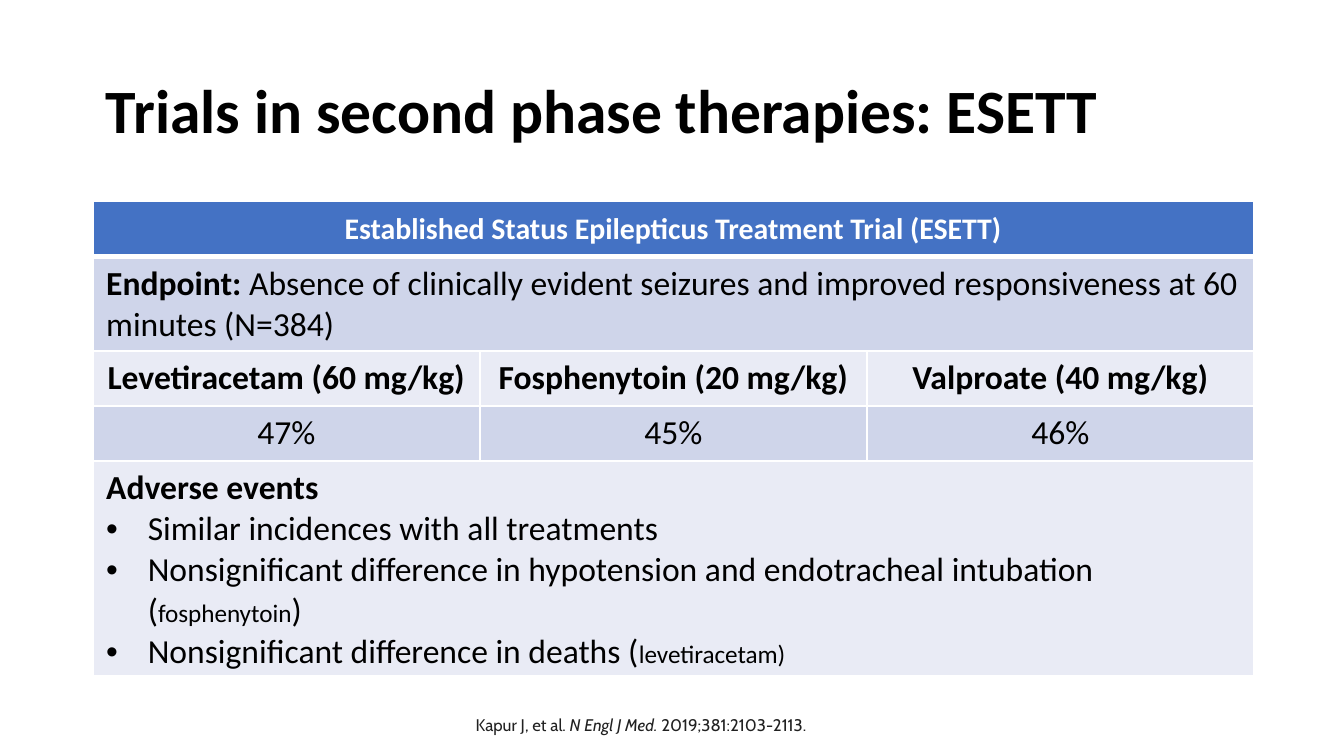
from dataclasses import dataclass

from lxml import etree
from pptx import Presentation
from pptx.dml.color import RGBColor
from pptx.enum.text import MSO_ANCHOR, PP_ALIGN
from pptx.oxml.ns import qn
from pptx.util import Inches, Pt

LEFT, CENTER = PP_ALIGN.LEFT, PP_ALIGN.CENTER
MIDDLE, BOTTOM = MSO_ANCHOR.MIDDLE, MSO_ANCHOR.BOTTOM


@dataclass(frozen=True)
class Theme:
    font: str = "Calibri"
    citation_font: str = "Cabin"
    black: str = "000000"
    white: str = "FFFFFF"
    citation: str = "212121"
    header_fill: str = "4472C4"
    dark_band: str = "CFD5EA"
    light_band: str = "E9EBF5"
    title_size: float = 33
    header_size: float = 16
    body_size: float = 18
    small_size: float = 13.5
    citation_size: float = 9


THEME = Theme()


def add_span(para, text, size=THEME.body_size, color=THEME.black,
             font=THEME.font, bold=False, italic=False):
    span = para.add_run()
    span.text = text
    span.font.name = font
    span.font.size = Pt(size)
    span.font.bold = bold
    span.font.italic = italic
    span.font.color.rgb = RGBColor.from_string(color)


def add_text_box(page, left, top, width, height, anchor, line_spacing):
    """Add a wrapping text box and return its first paragraph."""
    box = page.shapes.add_textbox(Inches(left), Inches(top), Inches(width), Inches(height))
    frame = box.text_frame
    frame.word_wrap = True
    frame.vertical_anchor = anchor
    para = frame.paragraphs[0]
    para.line_spacing = line_spacing
    return para


def add_bullet(para, indent=0.31):
    properties = para._p.get_or_add_pPr()
    properties.set("marL", str(Inches(indent)))
    properties.set("indent", str(-Inches(indent)))
    etree.SubElement(properties, qn("a:buFont"), typeface="Arial")
    etree.SubElement(properties, qn("a:buChar"), char="•")


def style_cell(cell, fill, top=1, bottom=1):
    """Draw white borders, then the fill, which must follow them in the XML."""
    properties = cell._tc.get_or_add_tcPr()
    for side, width in (("L", 1), ("R", 1), ("T", top), ("B", bottom)):
        line = etree.SubElement(properties, qn(f"a:ln{side}"), w=str(Pt(width)))
        solid = etree.SubElement(line, qn("a:solidFill"))
        etree.SubElement(solid, qn("a:srgbClr"), val=THEME.white)
    cell.fill.solid()
    cell.fill.fore_color.rgb = RGBColor.from_string(fill)
    cell.vertical_anchor = MIDDLE


def first_para(cell, align=LEFT):
    para = cell.text_frame.paragraphs[0]
    para.alignment = align
    return para


def add_trial_table(page):
    bands = [THEME.header_fill, THEME.dark_band, THEME.light_band,
             THEME.dark_band, THEME.light_band]
    frame = page.shapes.add_table(len(bands), 3, Inches(0.69), Inches(1.5),
                                  Inches(8.64), Inches(2.62))
    table = frame.table

    # Bands and borders, with a heavier rule under the header
    for index, fill in enumerate(bands):
        table.rows[index].height = Inches(0.41)
        for cell in table.rows[index].cells:
            style_cell(cell, fill, top=3 if index == 1 else 1,
                       bottom=3 if index == 0 else 1)
    for index in (0, 1, 4):
        table.cell(index, 0).merge(table.cell(index, 2))

    # Header and endpoint
    add_span(first_para(table.cell(0, 0), CENTER),
             "Established Status Epilepticus Treatment Trial (ESETT)",
             THEME.header_size, THEME.white, bold=True)
    endpoint = first_para(table.cell(1, 0))
    add_span(endpoint, "Endpoint: ", bold=True)
    add_span(endpoint, "Absence of clinically evident seizures and improved "
                       "responsiveness at 60 minutes (N=384)")

    # Treatment arms
    arms = [("Levetiracetam (60 mg/kg)", "47%"),
            ("Fosphenytoin (20 mg/kg)", "45%"),
            ("Valproate (40 mg/kg)", "46%")]
    for column, (drug, response) in enumerate(arms):
        add_span(first_para(table.cell(2, column), CENTER), drug, bold=True)
        add_span(first_para(table.cell(3, column), CENTER), response)

    # Adverse events
    body, small = THEME.body_size, THEME.small_size
    events = [
        [("Similar incidences with all treatments", body)],
        [("Nonsignificant difference in hypotension and endotracheal intubation (", body),
         ("fosphenytoin", small), (")", body)],
        [("Nonsignificant difference in deaths (", body), ("levetiracetam)", small)],
    ]
    cell = table.cell(4, 0)
    add_span(first_para(cell), "Adverse events", bold=True)
    for event in events:
        para = cell.text_frame.add_paragraph()
        add_bullet(para)
        for text, size in event:
            add_span(para, text, size)


def add_citation(page):
    para = add_text_box(page, 3.44, 4.96, 5.88, 0.56, BOTTOM, 1.1)
    for text, italic in (("Kapur J, et al. ", False), ("N Engl J Med.", True),
                         (" 2019;381:2103-2113.", False)):
        add_span(para, text, THEME.citation_size, THEME.citation,
                 THEME.citation_font, italic=italic)


def main():
    # Widescreen page, 16:9
    deck = Presentation()
    deck.slide_width, deck.slide_height = Inches(10), Inches(10 * 9 / 16)
    page = deck.slides.add_slide(deck.slide_layouts[6])

    title = add_text_box(page, 0.69, 0.3, 8.62, 1.09, MIDDLE, 0.9)
    add_span(title, "Trials in second phase therapies: ESETT",
             THEME.title_size, bold=True)
    add_trial_table(page)
    add_citation(page)
    deck.save("out.pptx")


if __name__ == "__main__":
    main()
